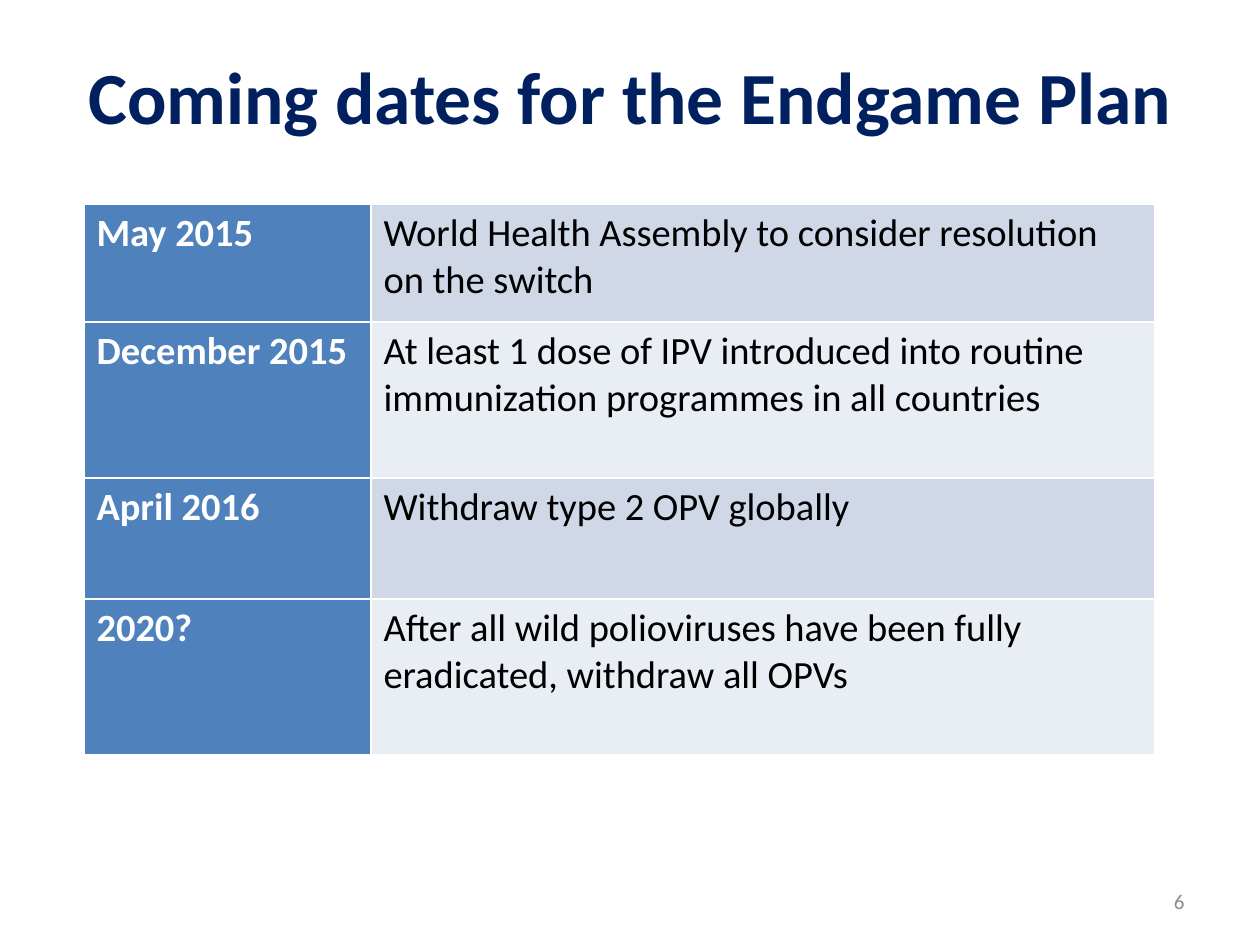
import pptx
import pptx.util
import pptx.dml.color
import pptx.enum.text
from pptx.oxml import parse_xml
from pptx.oxml.ns import nsdecls

ALIGN = pptx.enum.text.PP_ALIGN
MIDDLE = pptx.enum.text.MSO_ANCHOR.MIDDLE

TITLE = {"size": pptx.util.Pt(42), "bold": True}
NUMBER = {"size": pptx.util.Pt(12), "bold": False}
DATE = {"size": pptx.util.Pt(22), "bold": True}
EVENT = {"size": pptx.util.Pt(22), "bold": False}

COLS = [287, 784]
ROWS = [
    (118, "May 2015",
     "World Health Assembly to consider resolution on the switch"),
    (156, "December 2015",
     "At least 1 dose of IPV introduced into routine "
     "immunization programmes in all countries"),
    (121, "April 2016", "Withdraw type 2 OPV globally"),
    (156, "2020?",
     "After all wild polioviruses have been fully eradicated, "
     "withdraw all OPVs"),
]
BANDS = ["D0D8E8", "E9EDF4"]


def px(n):
    return pptx.util.Emu(round(n * 914400 / 126))


def color(code):
    return pptx.dml.color.RGBColor.from_string(code)


def write(frame, text, style, code, align=ALIGN.LEFT):
    para = frame.paragraphs[0]
    para.alignment = align
    run = para.add_run()
    run.text = text
    run.font.name = "Calibri"
    for name, value in style.items():
        setattr(run.font, name, value)
    run.font.color.rgb = color(code)


def add_label(slide, box, text, style, code, align):
    frame = slide.shapes.add_textbox(*map(px, box)).text_frame
    frame.word_wrap = True
    frame.vertical_anchor = MIDDLE
    write(frame, text, style, code, align)


def add_edges(cell):
    props = cell._tc.get_or_add_tcPr()
    for spot, side in enumerate(("lnL", "lnR", "lnT", "lnB")):
        props.insert(spot, parse_xml(
            f'<a:{side} {nsdecls("a")} w="12700"><a:solidFill>'
            f'<a:srgbClr val="FFFFFF"/></a:solidFill></a:{side}>'))


def add_dates(slide, left, top):
    high = sum(row[0] for row in ROWS)
    box = map(px, (left, top, sum(COLS), high))
    table = slide.shapes.add_table(len(ROWS), len(COLS), *box).table
    for col, wide in zip(table.columns, COLS):
        col.width = px(wide)
    for i, (tall, date, event) in enumerate(ROWS):
        table.rows[i].height = px(tall)
        looks = [(date, DATE, "FFFFFF", "4F81BD"),
                 (event, EVENT, "000000", BANDS[i % 2])]
        for j, (text, style, ink, fill) in enumerate(looks):
            cell = table.cell(i, j)
            cell.fill.solid()
            cell.fill.fore_color.rgb = color(fill)
            write(cell.text_frame, text, style, ink)
            add_edges(cell)


def main():
    deck = pptx.Presentation()
    deck.slide_width, deck.slide_height = px(1260), px(945)
    slide = deck.slides.add_slide(deck.slide_layouts[6])

    # Title
    add_label(slide, (63, 16, 1134, 158), "Coming dates for the Endgame Plan",
              TITLE, "002060", ALIGN.CENTER)
    # Slide number
    add_label(slide, (903, 876, 294, 50), "6", NUMBER, "8C8C8C", ALIGN.RIGHT)
    # Table of dates
    add_dates(slide, 84, 204)

    deck.save("out.pptx")


if __name__ == "__main__":
    main()
